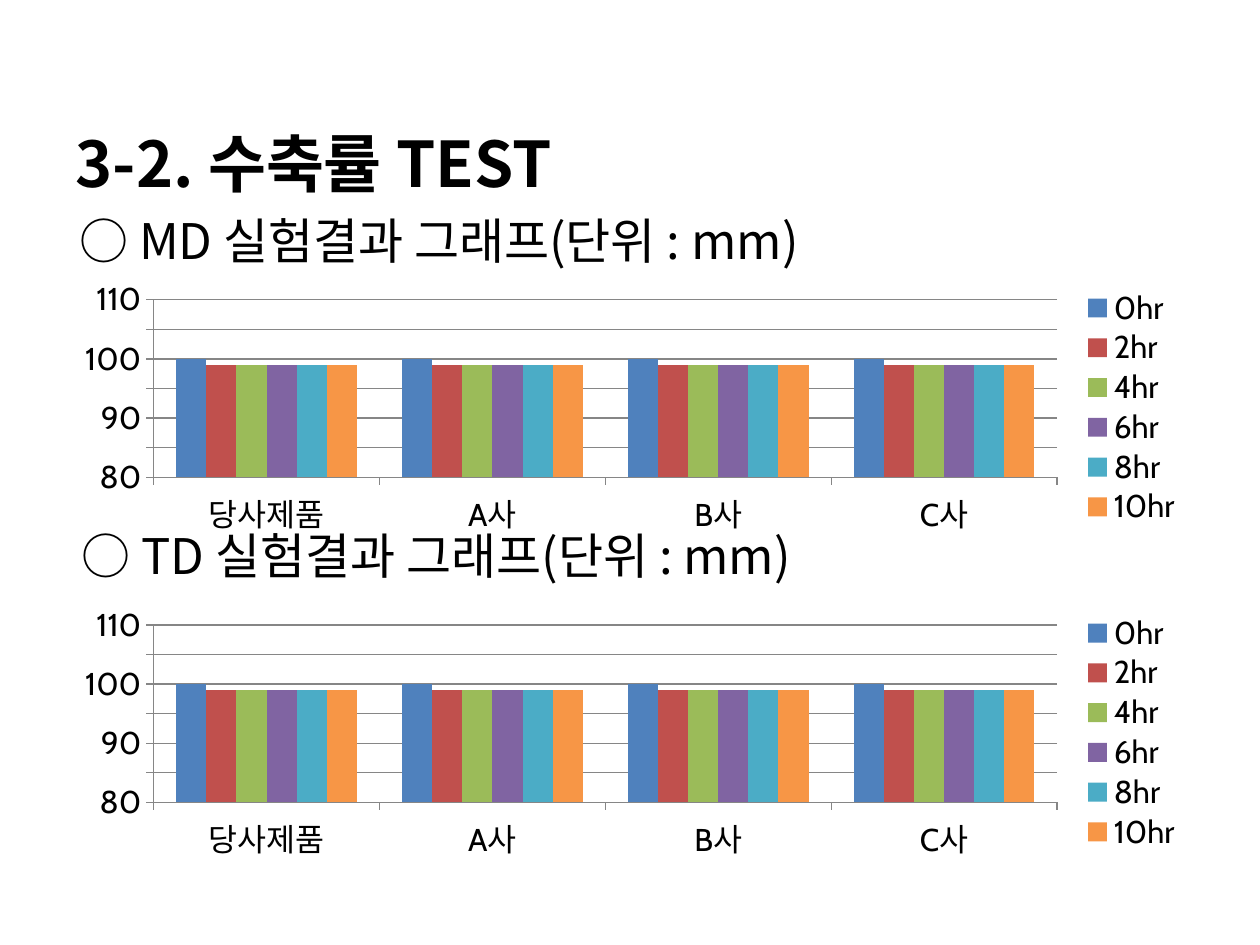
from dataclasses import dataclass

from lxml import etree
from pptx import Presentation
from pptx.chart.data import CategoryChartData
from pptx.dml.color import RGBColor
from pptx.enum.chart import XL_CHART_TYPE, XL_LEGEND_POSITION, XL_TICK_MARK
from pptx.enum.text import MSO_ANCHOR, PP_ALIGN
from pptx.oxml.ns import qn
from pptx.util import Inches, Pt

COLUMNS = XL_CHART_TYPE.COLUMN_CLUSTERED
LEGEND_RIGHT = XL_LEGEND_POSITION.RIGHT
OUTSIDE = XL_TICK_MARK.OUTSIDE
BOTTOM = MSO_ANCHOR.BOTTOM
LEFT = PP_ALIGN.LEFT


@dataclass(frozen=True)
class Theme:
    text: str = "000000"
    axis: str = "868686"
    series: tuple = ("4F81BD", "C0504D", "9BBB59", "8064A2", "4BACC6", "F79646")
    text_font: str = "Noto Sans CJK KR"
    chart_font: str = "Cabin"
    title_size: int = 36
    heading_size: int = 28
    chart_size: int = 18


THEME = Theme()
COMPANIES = ("당사제품", "A사", "B사", "C사")
# Length in mm after each time, the same for every company
LENGTHS = {"0hr": 100, "2hr": 99, "4hr": 99, "6hr": 99, "8hr": 99, "10hr": 99}
# Left, top, width, height inside the chart, in inches
PLOT_BOX = (0.72, 0.19, 7.17, 1.41)
LEGEND_BOX = (8.05, 0.09, 0.86, 1.91)


def place(sp, box):
    sp.left, sp.top, sp.width, sp.height = (Inches(v) for v in box)


def write_line(sp, text, size, bold=False):
    tf = sp.text_frame
    tf.word_wrap = True
    tf.vertical_anchor = BOTTOM
    p = tf.paragraphs[0]
    p.alignment = LEFT
    r = p.add_run()
    r.text = text
    r.font.size = Pt(size)
    r.font.bold = bold
    r.font.color.rgb = RGBColor.from_string(THEME.text)
    r.font.name = THEME.text_font
    r.font._element.set("kern", "0")
    ea = etree.Element(qn("a:ea"), typeface=THEME.text_font)
    r.font._element.find(qn("a:latin")).addnext(ea)
    return p


def add_title(s, box, text):
    place(s.shapes.title, box)
    write_line(s.shapes.title, text, THEME.title_size, bold=True)


def add_heading(s, box, text):
    sp = s.shapes.add_textbox(*(Inches(v) for v in box))
    p = write_line(sp, text, THEME.heading_size)
    p.line_spacing = 0.9


def style_line(line):
    line.color.rgb = RGBColor.from_string(THEME.axis)
    line.width = Pt(0.75)


def set_layout(part, box, chart_size, inner=False):
    """Fix a chart part at a box given in inches from the chart's corner."""
    for old in part.findall(qn("c:layout")):
        part.remove(old)
    layout = etree.Element(qn("c:layout"))
    manual = etree.SubElement(layout, qn("c:manualLayout"))
    if inner:
        etree.SubElement(manual, qn("c:layoutTarget"), val="inner")
    for name in ("xMode", "yMode"):
        etree.SubElement(manual, qn(f"c:{name}"), val="edge")
    for name, length, whole in zip("xywh", box, chart_size * 2):
        etree.SubElement(manual, qn(f"c:{name}"), val=f"{length / whole:.4f}")
    if inner:
        part.insert(0, layout)
    else:
        part.find(qn("c:legendPos")).addnext(layout)


def add_shrinkage_chart(s, box):
    data = CategoryChartData(number_format="General")
    data.categories = COMPANIES
    for time, length in LENGTHS.items():
        data.add_series(time, [length] * len(COMPANIES))
    chart = s.shapes.add_chart(COLUMNS, *(Inches(v) for v in box), data).chart
    chart.has_title = False
    chart.font.size = Pt(THEME.chart_size)
    chart.font.name = THEME.chart_font
    chart.font.color.rgb = RGBColor.from_string(THEME.text)

    chart.has_legend = True
    chart.legend.position = LEGEND_RIGHT
    chart.legend.include_in_layout = False
    set_layout(chart.legend._element, LEGEND_BOX, box[2:])

    plot = chart.plots[0]
    plot.vary_by_categories = False
    plot.gap_width = 150
    plot.overlap = 0
    set_layout(plot._element.getparent(), PLOT_BOX, box[2:], inner=True)
    for series, color in zip(plot.series, THEME.series):
        series.format.fill.solid()
        series.format.fill.fore_color.rgb = RGBColor.from_string(color)

    values = chart.value_axis
    values.minimum_scale, values.maximum_scale = 80, 110
    values.major_unit = 5
    values.has_major_gridlines = True
    style_line(values.major_gridlines.format.line)
    for axis in (chart.category_axis, values):
        axis.major_tick_mark = OUTSIDE
        style_line(axis.format.line)


def add_test_section(s, direction, heading_box, chart_box):
    add_shrinkage_chart(s, chart_box)
    add_heading(s, heading_box, f"○ {direction} 실험결과 그래프(단위 : mm)")


def main():
    prs = Presentation()
    prs.slide_width, prs.slide_height = Inches(10), Inches(7.5)
    s = prs.slides.add_slide(prs.slide_layouts[5])
    add_title(s, (0.5, 0.39, 9, 1.25), "3-2. 수축률 TEST")
    add_test_section(s, "MD", (0.53, 1.64, 9, 0.55), (0.5, 2.19, 9.01, 2.11))
    add_test_section(s, "TD", (0.55, 4.14, 9, 0.55), (0.5, 4.77, 9.01, 2.11))
    prs.save("out.pptx")


if __name__ == "__main__":
    main()
